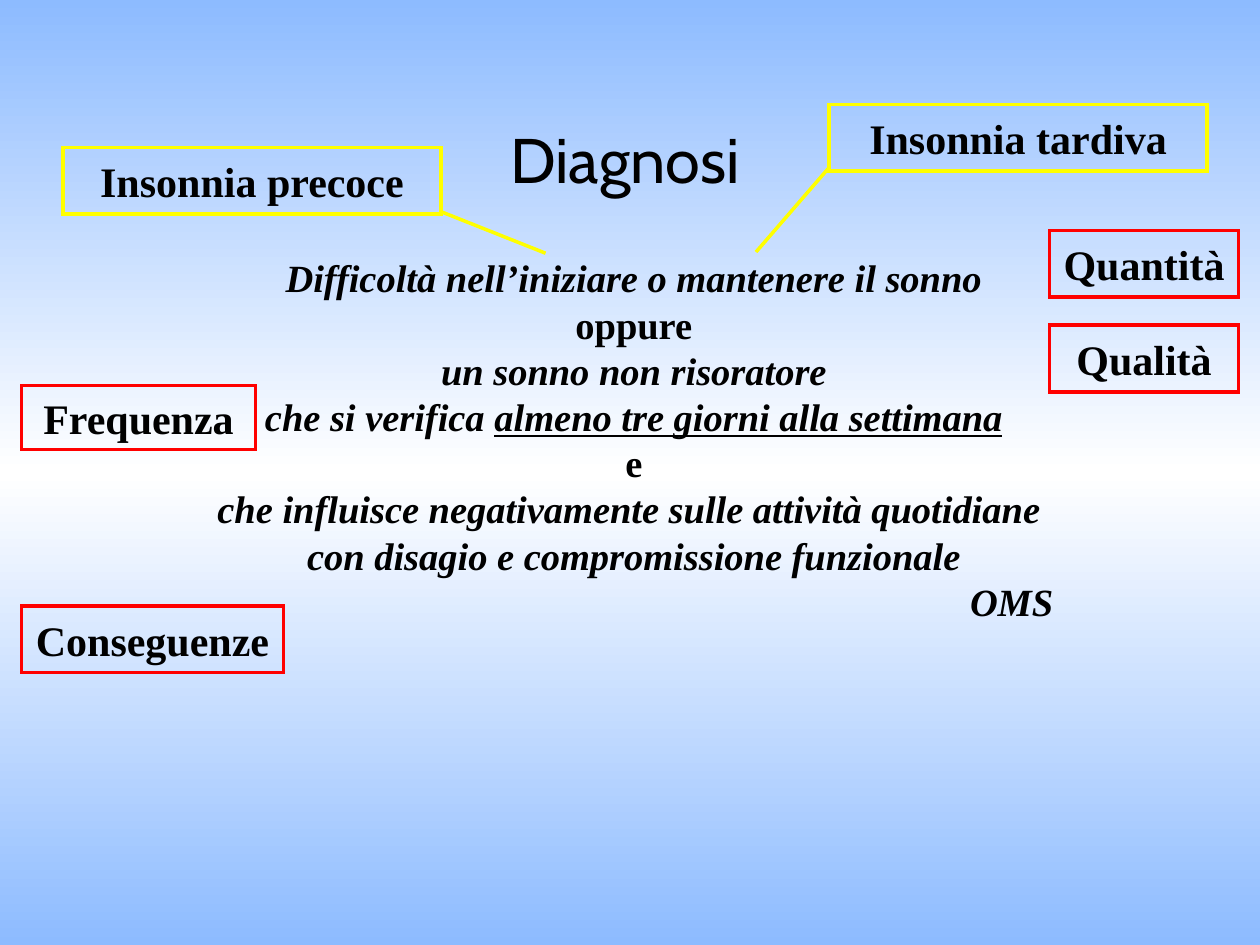
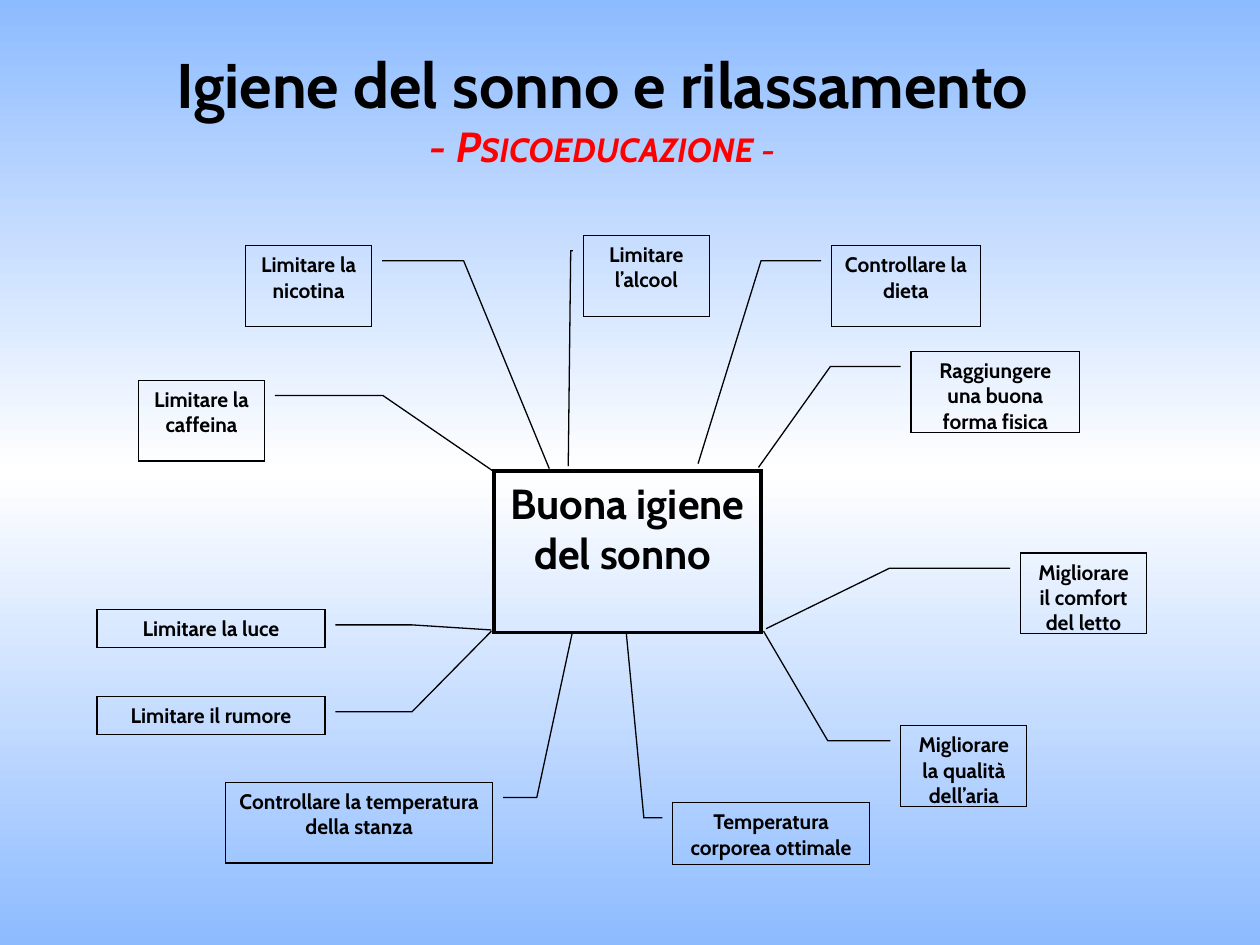
from copy import deepcopy
from dataclasses import dataclass

from lxml import etree
from pptx import Presentation
from pptx.dml.color import RGBColor
from pptx.enum.shapes import MSO_CONNECTOR, MSO_SHAPE
from pptx.enum.text import MSO_ANCHOR, MSO_AUTO_SIZE, PP_ALIGN
from pptx.oxml.ns import qn
from pptx.util import Inches, Pt

RECTANGLE = MSO_SHAPE.RECTANGLE
BENT_CALLOUT = MSO_SHAPE.LINE_CALLOUT_2
STRAIGHT = MSO_CONNECTOR.STRAIGHT
TOP, MIDDLE = MSO_ANCHOR.TOP, MSO_ANCHOR.MIDDLE
LEFT, CENTER = PP_ALIGN.LEFT, PP_ALIGN.CENTER
NO_AUTOFIT = MSO_AUTO_SIZE.NONE

# The slide is a grid of 100 columns by 75 rows of square cells
COLUMNS, ROWS = 100, 75
CELL = Inches(0.1)
TITLE_ONLY = 5


@dataclass(frozen=True)
class Theme:
    sky: str = "8DBBFF"
    white: str = "FFFFFF"
    ink: str = "000000"
    yellow: str = "FFFF00"
    red: str = "FF0000"
    sans: str = "Cabin"
    serif: str = "Times New Roman"
    title_size: int = 36
    heading_size: int = 24
    body_size: int = 22
    note_size: int = 12
    thick_line: float = 2
    thin_line: float = 0.75


THEME = Theme()


def cells(*counts):
    return [round(count * CELL) for count in counts]


class SlideBuilder:
    """Holds the theme and the slide being drawn."""

    def __init__(self, presentation, theme):
        self.presentation = presentation
        self.theme = theme
        self.slide = None
        self.paint_background()

    def paint_background(self):
        master = self.presentation.slide_master
        fill = master.background.fill
        fill.gradient()
        stop_list = master.element.find(f".//{qn('p:bg')}//{qn('a:gsLst')}")
        stop_list.append(deepcopy(stop_list[-1]))
        colors = (self.theme.sky, self.theme.white, self.theme.sky)
        for stop, position, color in zip(fill.gradient_stops, (0, 0.5, 1), colors):
            stop.position = position
            stop.color.rgb = RGBColor.from_string(color)
        fill.gradient_angle = 90

    def new_slide(self):
        layout = self.presentation.slide_layouts[TITLE_ONLY]
        self.slide = self.presentation.slides.add_slide(layout)

    def style(self, paragraph, size, name, color=None, bold=True, italic=False,
              align=CENTER):
        paragraph.alignment = align
        font = paragraph.font
        font.size, font.name = Pt(size), name
        font.bold, font.italic = bold, italic
        font.color.rgb = RGBColor.from_string(color or self.theme.ink)

    def outline(self, line, color, width):
        line.color.rgb = RGBColor.from_string(color)
        line.width = Pt(width)

    def title(self, text, area, bold):
        shape = self.slide.shapes.title
        shape.left, shape.top, shape.width, shape.height = cells(*area)
        frame = shape.text_frame
        frame.auto_size = NO_AUTOFIT
        frame.word_wrap = True
        frame.vertical_anchor = TOP
        frame.text = text
        self.style(frame.paragraphs[0], self.theme.title_size, self.theme.sans, bold=bold)
        return frame

    def subtitle(self, frame, opening, small_caps):
        paragraph = frame.add_paragraph()
        self.style(paragraph, self.theme.heading_size, self.theme.sans,
                   self.theme.red, italic=True)
        paragraph.add_run().text = opening
        run = paragraph.add_run()
        run.text = small_caps
        run._r.get_or_add_rPr().set("cap", "small")

    def text(self, area, lines):
        """Each line is (plain text, underlined text, italic, left indent)."""
        frame = self.slide.shapes.add_textbox(*cells(*area)).text_frame
        frame.word_wrap = True
        frame.vertical_anchor = MIDDLE
        for index, (plain, underlined, italic, indent) in enumerate(lines):
            paragraph = frame.add_paragraph() if index else frame.paragraphs[0]
            self.style(paragraph, self.theme.body_size, self.theme.serif,
                       italic=italic, align=LEFT if indent else CENTER)
            paragraph.add_run().text = plain
            if underlined:
                run = paragraph.add_run()
                run.text = underlined
                run.font.underline = True
            if indent:
                paragraph._p.get_or_add_pPr().set("marL", str(cells(indent)[0]))

    def box(self, text, area, size, name, color, width, kind=RECTANGLE, anchor=MIDDLE):
        shape = self.slide.shapes.add_shape(kind, *cells(*area))
        shape.shadow.inherit = False
        shape.fill.background()
        self.outline(shape.line, color, width)
        # Square corners
        etree.SubElement(shape._element.spPr.find(qn("a:ln")), qn("a:miter"), lim="800000")
        frame = shape.text_frame
        frame.word_wrap = True
        frame.vertical_anchor = anchor
        frame.text = text
        self.style(frame.paragraphs[0], size, name)
        return shape

    def label(self, text, area, color):
        self.box(text, area, self.theme.heading_size, self.theme.serif, color,
                 self.theme.thick_line)

    def callout(self, text, area, elbow, target):
        """A note whose leader runs level to the elbow, then to the target."""
        left, top, width, height = area
        shape = self.box(text, area, self.theme.note_size, self.theme.sans,
                         self.theme.ink, self.theme.thin_line, BENT_CALLOUT, TOP)
        gap, drop = 0.83, 1.2
        start = left - gap if elbow < left else left + width + gap
        points = ((start, top + drop), (elbow, top + drop), target)
        for index, (x, y) in enumerate(points):
            shape.adjustments[2 * index] = (y - top) / height
            shape.adjustments[2 * index + 1] = (x - left) / width

    def pointer(self, start, end, color):
        line = self.slide.shapes.add_connector(STRAIGHT, *cells(*start, *end))
        self.outline(line.line, color, self.theme.thick_line)
        etree.SubElement(line._element.spPr, qn("a:effectLst"))


def diagnosis_slide(builder):
    theme = builder.theme
    builder.new_slide()
    builder.title("Diagnosi", (37.4, 9.1, 24.4, 6.4), bold=False)

    # Definition
    builder.text((14.2, 19.7, 72.2, 30.3), [
        ("Difficoltà nell’iniziare o mantenere il sonno", "", True, 0),
        ("oppure", "", False, 0),
        ("un sonno non risoratore", "", True, 0),
        ("che si verifica ", "almeno tre giorni alla settimana", True, 0),
        ("e", "", False, 0),
        ("che influisce negativamente sulle attività quotidiane ", "", True, 0),
        ("con disagio e compromissione funzionale", "", True, 0),
        ("OMS", "", True, 61.8),
    ])

    # Kinds of insomnia, pointing at the definition
    kinds = [
        ("Insonnia precoce", (5, 11.7), (35, 16.8), (43.3, 20.1)),
        ("Insonnia tardiva", (65.8, 8.3), (65.8, 13.3), (60, 20)),
    ]
    for text, corner, start, end in kinds:
        builder.label(text, (*corner, 30, 5.3), theme.yellow)
        builder.pointer(start, end, theme.yellow)

    # Criteria
    criteria = [
        ("Quantità", (83.3, 18.3, 15, 5.3)),
        ("Qualità", (83.3, 25.8, 15, 5.3)),
        ("Frequenza", (1.7, 30.6, 18.6, 5.1)),
        ("Conseguenze", (1.7, 48.1, 20.8, 5.3)),
    ]
    for text, area in criteria:
        builder.label(text, area, theme.red)


def hygiene_slide(builder):
    theme = builder.theme
    builder.new_slide()
    frame = builder.title("Igiene del sonno e rilassamento", (8, 3.1, 79.6, 11.1), bold=True)
    builder.subtitle(frame, "- ", "Psicoeducazione -")

    # Central topic
    builder.box("Buona igiene del sonno ", (39.2, 37.4, 21.2, 12.8), theme.heading_size,
                theme.sans, theme.ink, theme.thick_line, anchor=TOP)

    # Advice: text, area, elbow column, target on the central topic
    advice = [
        ("Controllare la dieta", (66, 19.5, 11.8, 6.4), 60.4, (55.4, 36.8)),
        ("Limitare la nicotina", (19.5, 19.5, 10, 6.4), 36.8, (43.6, 37.2)),
        ("Limitare l’alcool", (46.3, 18.7, 10, 6.4), 45.3, (45.1, 37)),
        ("Controllare la temperatura della stanza", (17.9, 62.1, 21.2, 6.4), 42.6, (45.4, 50.3)),
        ("Temperatura corporea ottimale", (53.4, 63.7, 15.6, 4.9), 51.1, (49.7, 50.2)),
        ("Raggiungere una buona forma fisica", (72.3, 27.9, 13.4, 6.4), 65.9, (60.2, 37.1)),
        ("Migliorare il comfort del letto", (81, 43.9, 10, 6.4), 70.6, (60.8, 49.9)),
        ("Limitare la luce", (7.7, 48.4, 18.1, 3), 32.7, (39, 50)),
        ("Migliorare la qualità dell’aria", (71.5, 57.6, 10, 6.4), 65.7, (60.6, 50.1)),
        ("Limitare il rumore", (7.7, 55.3, 18.1, 3), 32.7, (39, 50.1)),
        ("Limitare la caffeina", (11, 30.2, 10, 6.4), 30.4, (39.3, 37.5)),
    ]
    for item in advice:
        builder.callout(*item)


def main():
    presentation = Presentation()
    presentation.slide_width, presentation.slide_height = cells(COLUMNS, ROWS)
    builder = SlideBuilder(presentation, THEME)
    diagnosis_slide(builder)
    hygiene_slide(builder)
    presentation.save("out.pptx")


if __name__ == "__main__":
    main()
